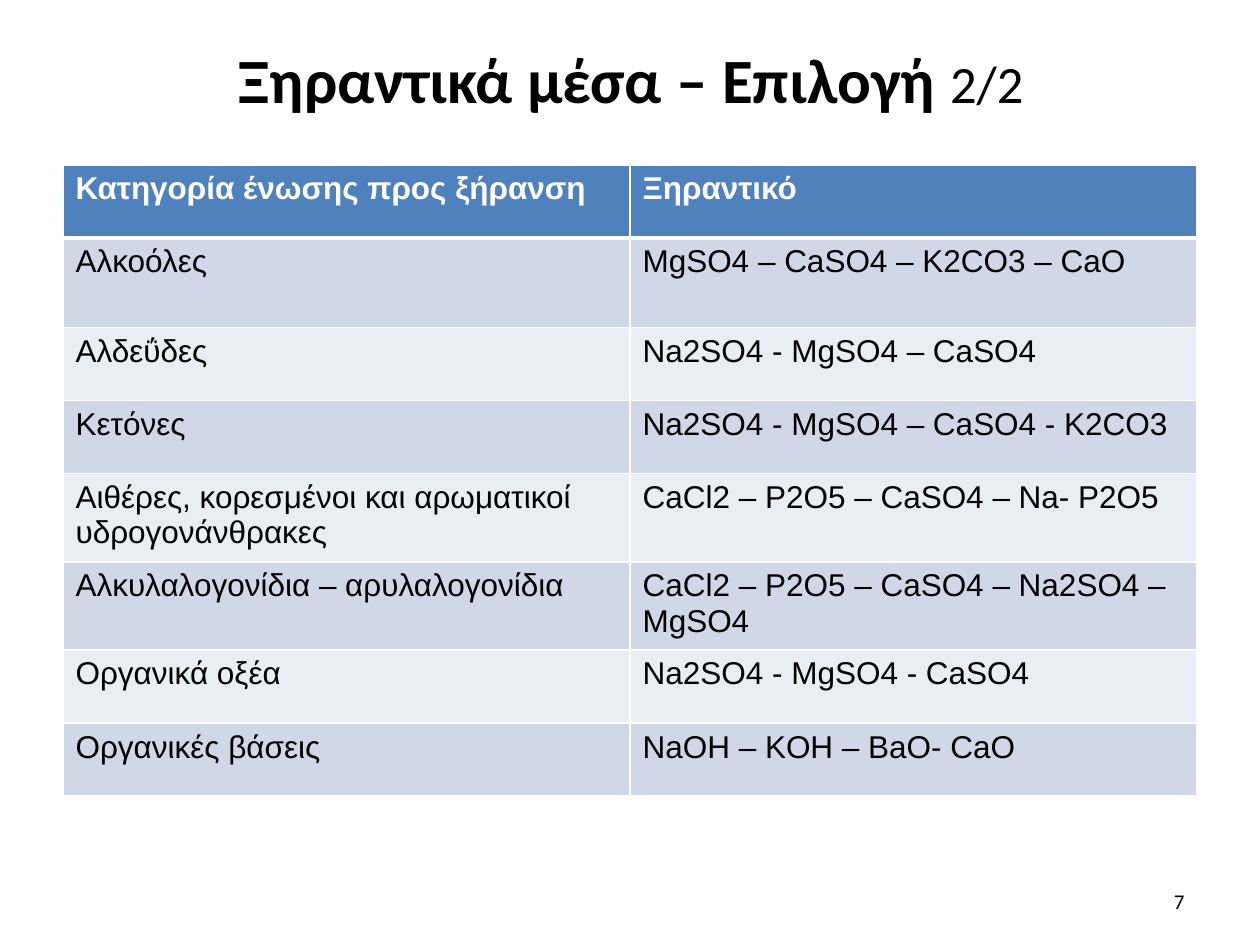
"""Build the slide on choosing drying agents for classes of compounds."""
from lxml import etree
from pptx import Presentation
from pptx.dml.color import RGBColor
from pptx.enum.text import MSO_ANCHOR, PP_ALIGN
from pptx.oxml.ns import qn
from pptx.util import Inches, Pt

MIDDLE = MSO_ANCHOR.MIDDLE
LEFT, CENTER, RIGHT = PP_ALIGN.LEFT, PP_ALIGN.CENTER, PP_ALIGN.RIGHT
BLACK = RGBColor(0x00, 0x00, 0x00)
WHITE = RGBColor(0xFF, 0xFF, 0xFF)
HEADER_BLUE = RGBColor(0x4F, 0x81, 0xBD)
BANDS = (RGBColor(0xE9, 0xED, 0xF4), RGBColor(0xD0, 0xD8, 0xE8))

TITLE = [("Ξηραντικά μέσα – Επιλογή ", 36, True), ("2/2", 30, False)]
PAGE_NUMBER = "7"
ROWS = [
    (0.58, "Κατηγορία ένωσης προς ξήρανση", "Ξηραντικό"),
    (0.71, "Αλκοόλες", "MgSO4 – CaSO4 – K2CO3 – CaO"),
    (0.58, "Αλδεΰδες", "Na2SO4 - MgSO4 – CaSO4"),
    (0.58, "Κετόνες", "Na2SO4 - MgSO4 – CaSO4 - K2CO3"),
    (0.7, "Αιθέρες, κορεσμένοι και αρωματικοί υδρογονάνθρακες",
     "CaCl2 – P2O5 – CaSO4 – Na- P2O5"),
    (0.7, "Αλκυλαλογονίδια – αρυλαλογονίδια",
     "CaCl2 – P2O5 – CaSO4 – Na2SO4 – MgSO4"),
    (0.58, "Οργανικά οξέα", "Na2SO4 - MgSO4 - CaSO4"),
    (0.58, "Οργανικές βάσεις", "NaOH – KOH – BaO- CaO"),
]
COLUMN_WIDTH = 4.5


def add_span(para, text, size, font, color, bold=False):
    span = para.add_run()
    span.text = text
    span.font.size = Pt(size)
    span.font.name = font
    span.font.bold = bold
    span.font.color.rgb = color


def set_frame(frame, align):
    frame.word_wrap = True
    frame.vertical_anchor = MIDDLE
    para = frame.paragraphs[0]
    para.alignment = align
    return para


def set_borders(cell, widths):
    properties = cell._tc.get_or_add_tcPr()
    for side, width in widths.items():
        line = etree.SubElement(properties, qn(f"a:ln{side}"), w=str(Pt(width)))
        fill = etree.SubElement(line, qn("a:solidFill"))
        etree.SubElement(fill, qn("a:srgbClr"), val=str(WHITE))


def add_title(page):
    box = page.shapes.title
    box.left, box.top = Inches(0.51), Inches(0.13)
    box.width, box.height = Inches(9), Inches(0.99)
    para = set_frame(box.text_frame, CENTER)
    for text, size, bold in TITLE:
        add_span(para, text, size, "Calibri", BLACK, bold)


def add_agents_table(page):
    columns = len(ROWS[0]) - 1
    height = sum(row[0] for row in ROWS)
    table = page.shapes.add_table(
        len(ROWS), columns, Inches(0.5), Inches(1.31),
        Inches(COLUMN_WIDTH * columns), Inches(height)).table
    for column in table.columns:
        column.width = Inches(COLUMN_WIDTH)
    for index, (row_height, *texts) in enumerate(ROWS):
        header = index == 0
        table.rows[index].height = Inches(row_height)
        for position, text in enumerate(texts):
            cell = table.cell(index, position)
            set_borders(cell, {"L": 1, "R": 1, "T": 3 if index == 1 else 1,
                               "B": 3 if header else 1})
            cell.fill.solid()
            cell.fill.fore_color.rgb = HEADER_BLUE if header else BANDS[index % 2]
            para = cell.text_frame.paragraphs[0]
            para.alignment = LEFT
            add_span(para, text, 18, "Arial", WHITE if header else BLACK, header)


def add_page_number(page):
    box = page.shapes.add_textbox(
        Inches(7.17), Inches(6.95), Inches(2.33), Inches(0.4))
    para = set_frame(box.text_frame, RIGHT)
    add_span(para, PAGE_NUMBER, 12, "Calibri", BLACK)


def main():
    deck = Presentation()
    deck.slide_width, deck.slide_height = Inches(10), Inches(7.5)
    page = deck.slides.add_slide(deck.slide_layouts[5])
    add_title(page)
    add_agents_table(page)
    add_page_number(page)
    deck.save("out.pptx")


if __name__ == "__main__":
    main()
